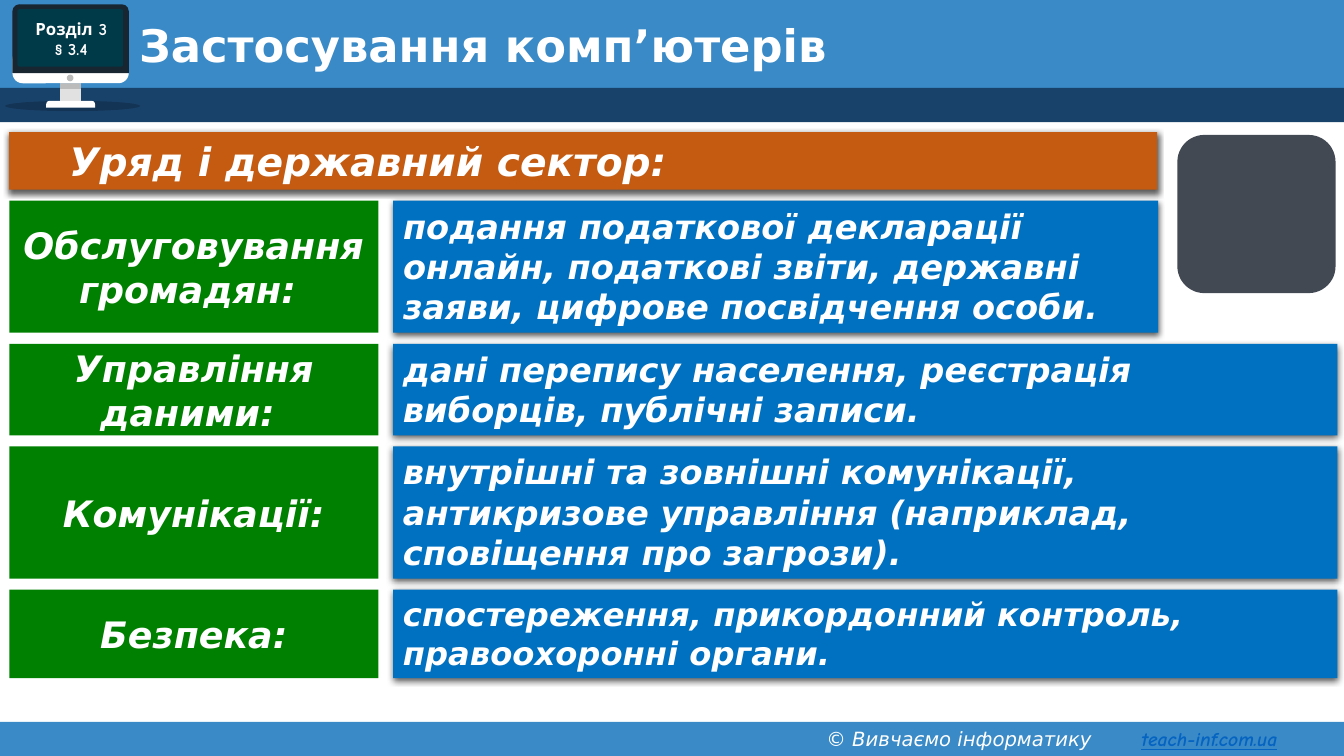
from dataclasses import dataclass

from lxml import etree
from pptx import Presentation
from pptx.dml.color import RGBColor
from pptx.enum.shapes import MSO_SHAPE
from pptx.enum.text import MSO_ANCHOR, PP_ALIGN
from pptx.oxml import parse_xml
from pptx.oxml.ns import nsdecls, qn
from pptx.util import Pt

RECT, ROUND, OVAL = MSO_SHAPE.RECTANGLE, MSO_SHAPE.ROUNDED_RECTANGLE, MSO_SHAPE.OVAL
ROUND_TOP = MSO_SHAPE.ROUND_2_SAME_RECTANGLE
TOP, MIDDLE = MSO_ANCHOR.TOP, MSO_ANCHOR.MIDDLE
LEFT, CENTER, JUSTIFY = PP_ALIGN.LEFT, PP_ALIGN.CENTER, PP_ALIGN.JUSTIFY

WHITE = RGBColor(0xFF, 0xFF, 0xFF)
BLACK = RGBColor(0x00, 0x00, 0x00)
SKY = RGBColor(0x39, 0x8A, 0xC7)
NAVY = RGBColor(0x19, 0x42, 0x6B)
BEZEL = RGBColor(0x18, 0x26, 0x32)
SCREEN = RGBColor(0x00, 0x39, 0x48)
SILVER = RGBColor(0xE1, 0xE1, 0xE1)
GRAY = RGBColor(0xBB, 0xBB, 0xBB)
ORANGE = RGBColor(0xC5, 0x5A, 0x11)
BLUE = RGBColor(0x00, 0x70, 0xC0)
GREEN = RGBColor(0x00, 0x80, 0x00)
LINK = RGBColor(0x05, 0x63, 0xC1)
SLATE = RGBColor(0x42, 0x49, 0x53)

SANS, COMIC = "DejaVu Sans", "Comic Neue"
SLIDE_W, SLIDE_H = 960, 540
LABEL_X, LABEL_W = 6.8, 263.5
DETAIL_X, NARROW_W, WIDE_W = 280.8, 546.5, 674.6
ROWS_TOP, ROW_GAP = 143.3, 7.9


@dataclass
class Box:
    x: float
    y: float
    w: float
    h: float


@dataclass
class Part:
    kind: MSO_SHAPE
    box: Box
    color: RGBColor
    radius: float | None = None
    opacity: int = 100


@dataclass
class Row:
    label: str
    detail: str
    height: float
    width: float = WIDE_W
    size: float = 24


BANDS = [
    Part(RECT, Box(0, 0, SLIDE_W, 65.5), SKY),
    Part(RECT, Box(0, 62.8, SLIDE_W, 24.5), NAVY),
    Part(RECT, Box(0, 515.7, SLIDE_W, 24.3), SKY),
]
MONITOR = [
    Part(OVAL, Box(3.7, 72, 96.3, 7.4), BLACK, opacity=20),
    Part(ROUND, Box(8.9, 35, 83.1, 24.5), WHITE, 0.3),
    Part(ROUND_TOP, Box(8.9, 3.1, 83.1, 49.2), BEZEL, 0.1),
    Part(RECT, Box(42.9, 59.5, 15, 12.5), SILVER),
    Part(RECT, Box(42.9, 59.5, 15, 4), GRAY),
    Part(ROUND_TOP, Box(33, 72, 34.9, 5), WHITE, 0.5),
    Part(OVAL, Box(47.7, 53.3, 4.8, 4.8), GRAY),
    Part(ROUND, Box(12.4, 6.6, 75.6, 41), SCREEN, 0.036),
]
ROWS = [
    Row("Обслуговування громадян: ",
        "подання податкової декларації онлайн, податкові звіти, державні заяви, "
        "цифрове посвідчення особи.", 94.4, NARROW_W),
    Row("Управління даними: ",
        "дані перепису населення, реєстрація виборців, публічні записи.", 65.4),
    Row("Комунікації:",
        "внутрішні та зовнішні комунікації, антикризове управління (наприклад, "
        "сповіщення про загрози).", 94.4),
    Row("Безпека:",
        "спостереження, прикордонний контроль, правоохоронні органи.", 63.2, size=23),
]


def add_part(s, part: Part):
    b = part.box
    sp = s.shapes.add_shape(part.kind, Pt(b.x), Pt(b.y), Pt(b.w), Pt(b.h))
    sp.shadow.inherit = False
    sp.fill.solid()
    sp.fill.fore_color.rgb = part.color
    sp.line.fill.background()
    if part.radius is not None:
        sp.adjustments[0] = part.radius
    if part.opacity < 100:
        color = sp._element.spPr.find(qn("a:solidFill"))[0]
        etree.SubElement(color, qn("a:alpha"), val=str(part.opacity * 1000))
    return sp


def add_textbox(s, b: Box):
    return s.shapes.add_textbox(Pt(b.x), Pt(b.y), Pt(b.w), Pt(b.h))


def add_drop_shadow(sp) -> None:
    effects = sp._element.spPr.find(qn("a:effectLst"))
    effects.append(parse_xml(
        f'<a:outerShdw {nsdecls("a")} blurRad="{Pt(4.5)}" dist="{Pt(1.5)}" dir="5400000" '
        'algn="ctr" rotWithShape="0"><a:srgbClr val="000000"><a:alpha val="63000"/>'
        '</a:srgbClr></a:outerShdw>'))


def start_text(sp, anchor=TOP, align=LEFT):
    """Prepare the shape's text frame and return its first paragraph."""
    tf = sp.text_frame
    tf.word_wrap = True
    tf.vertical_anchor = anchor
    p = tf.paragraphs[0]
    p.alignment = align
    return p


def add_run(p, text: str, size: float, font: str = SANS, color: RGBColor = WHITE,
            bold: bool = True, italic: bool = True, underline: bool = False) -> None:
    r = p.add_run()
    r.text = text
    f = r.font
    f.size, f.name, f.bold, f.italic, f.underline = Pt(size), font, bold, italic, underline
    f.color.rgb = color


def add_monitor(s) -> None:
    for part in MONITOR:
        add_part(s, part)
    p = start_text(add_textbox(s, Box(9.4, 6.3, 83, 42.7)), MIDDLE, CENTER)
    add_run(p, "Розділ 3", 12, COMIC, italic=False)
    p = p._parent.add_paragraph()
    p.alignment = CENTER
    add_run(p, "§ 3.4", 12, COMIC, italic=False)


def add_footer(s) -> None:
    p = start_text(add_textbox(s, Box(583.2, 515.7, 376.8, 24.3)))
    tabs = etree.SubElement(p._p.get_or_add_pPr(), qn("a:tabLst"))
    etree.SubElement(tabs, qn("a:tab"), pos=str(Pt(225)), algn="l")
    add_run(p, "© Вивчаємо інформатику\t", 14, bold=False)
    add_run(p, "teach-inf.com.ua", 14, COMIC, LINK, underline=True)


def add_heading(s) -> None:
    p = start_text(add_textbox(s, Box(92.2, 13, 843.8, 41.8)), MIDDLE)
    p.line_spacing = 0.9
    add_run(p, "Застосування комп’ютерів", 32, italic=False)

    sp = add_part(s, Part(RECT, Box(6.5, 94.3, 820.1, 41.2), ORANGE))
    add_drop_shadow(sp)
    p = start_text(sp, align=JUSTIFY)
    p._p.get_or_add_pPr().set("indent", str(Pt(36)))
    add_run(p, "Уряд і державний сектор:", 28)


def add_rows(s) -> None:
    y = ROWS_TOP
    for row in ROWS:
        detail = add_part(s, Part(RECT, Box(DETAIL_X, y, row.width, row.height), BLUE))
        add_drop_shadow(detail)
        add_run(start_text(detail), row.detail, row.size)
        label = add_part(s, Part(RECT, Box(LABEL_X, y, LABEL_W, row.height), GREEN))
        add_run(start_text(label, MIDDLE, CENTER), row.label, 26)
        y += row.height + ROW_GAP


def main() -> None:
    prs = Presentation()
    prs.slide_width, prs.slide_height = Pt(SLIDE_W), Pt(SLIDE_H)
    s = prs.slides.add_slide(prs.slide_layouts[6])
    for band in BANDS:
        add_part(s, band)
    add_monitor(s)
    add_footer(s)
    add_heading(s)
    add_rows(s)
    add_part(s, Part(ROUND, Box(841, 96.4, 113, 113), SLATE, 0.17))
    prs.save("out.pptx")


if __name__ == "__main__":
    main()
